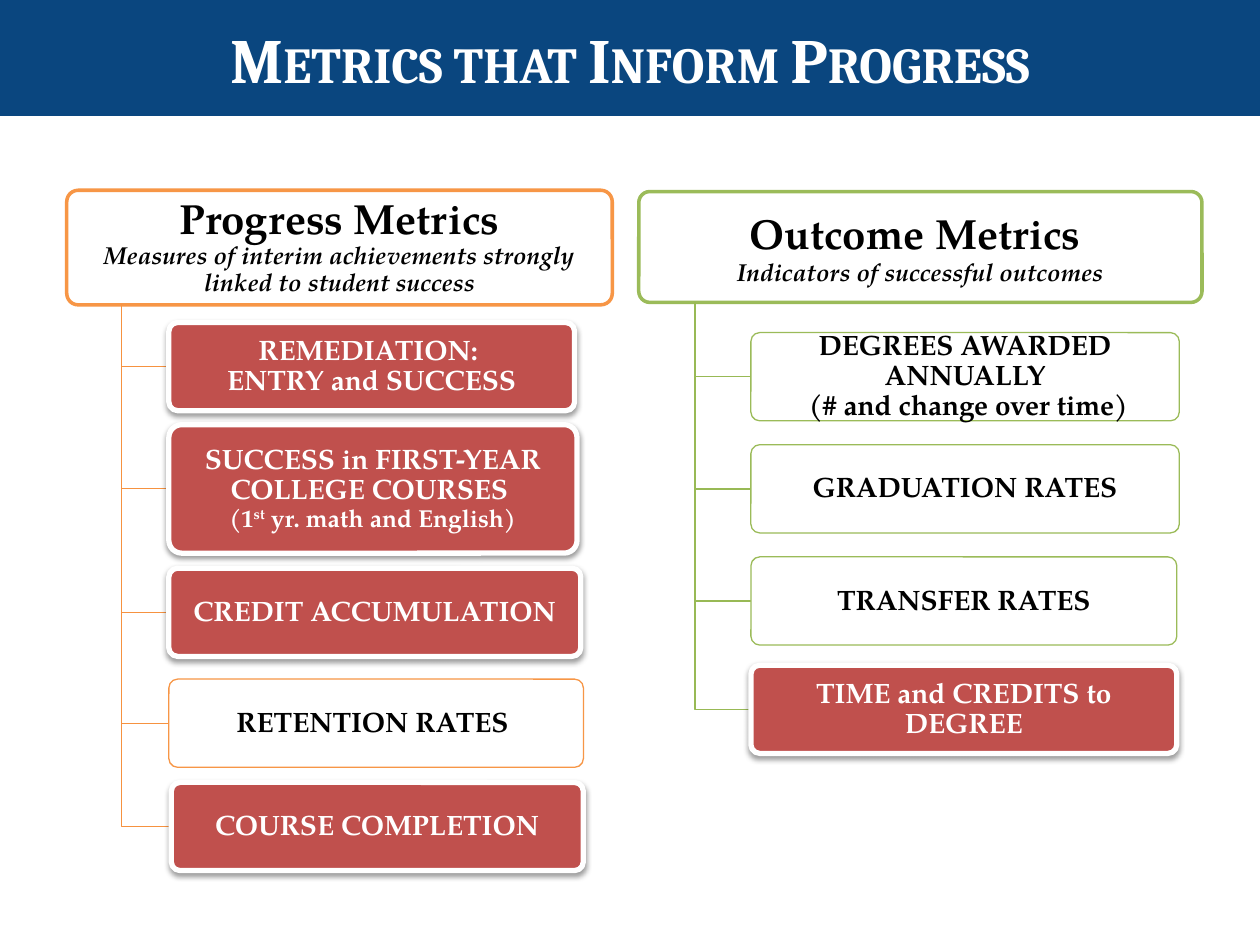
from pptx import Presentation
from pptx.dml.color import RGBColor
from pptx.enum.shapes import MSO_SHAPE
from pptx.enum.text import MSO_ANCHOR, PP_ALIGN
from pptx.oxml import parse_xml
from pptx.oxml.ns import nsdecls
from pptx.util import Inches, Pt

COLUMNS, ROWS = 100, 75  # grid of square cells over the slide
CELL = Inches(0.1)
BODY_FONT = "TeX Gyre Pagella"
BLACK, WHITE, NAVY, RED = "000000", "FFFFFF", "0A467F", "C0504D"


def grid(cells):
    return round(cells * CELL)


def rgb(hex_color):
    return RGBColor.from_string(hex_color)


def write(paragraph, text, size=16, font=BODY_FONT, color=BLACK, bold=True,
          italic=False, small_caps=False, raised=False):
    run = paragraph.add_run()
    run.text = text
    run.font.size = Pt(size)
    run.font.name = font
    run.font.bold = bold
    run.font.italic = italic
    run.font.color.rgb = rgb(color)
    properties = run.font._element
    if small_caps:
        properties.set("cap", "small")
    if raised:
        properties.set("baseline", "30000")


def add_lines(panel, lines, spacing=0.9, **base):
    """Each line is a list of (text, format) pairs."""
    frame = panel.text_frame
    frame.word_wrap = True
    frame.vertical_anchor = MSO_ANCHOR.MIDDLE
    frame.margin_left = frame.margin_right = Inches(0.02)
    frame.margin_top = frame.margin_bottom = 0
    for number, line in enumerate(lines):
        paragraph = frame.add_paragraph() if number else frame.paragraphs[0]
        paragraph.alignment = PP_ALIGN.CENTER
        paragraph.line_spacing = spacing
        for text, style in line:
            write(paragraph, text, **{**base, **style})


def add_panel(slide, box, fill, line=None, weight=0.75, kind=MSO_SHAPE.ROUNDED_RECTANGLE):
    panel = slide.shapes.add_shape(kind, *map(grid, box))
    panel.shadow.inherit = False
    panel.fill.solid()
    panel.fill.fore_color.rgb = rgb(fill)
    if line:
        panel.line.color.rgb = rgb(line)
        panel.line.width = Pt(weight)
    else:
        panel.line.fill.background()
    if kind == MSO_SHAPE.ROUNDED_RECTANGLE:
        panel.adjustments[0] = 0.1
    return panel


def add_drop_shadow(panel):
    effects = panel._element.spPr.find(
        "{http://schemas.openxmlformats.org/drawingml/2006/main}effectLst")
    effects.append(parse_xml(
        f'<a:outerShdw {nsdecls("a")} blurRad="{Pt(3.1)}" dist="{Pt(1.6)}" '
        'dir="5400000" rotWithShape="0"><a:srgbClr val="000000">'
        '<a:alpha val="38000"/></a:srgbClr></a:outerShdw>'))


def add_branch(slide, trunk, top, right, bottom, color):
    path = slide.shapes.build_freeform(grid(trunk), grid(top))
    path.add_line_segments([(grid(trunk), grid(bottom)), (grid(right), grid(bottom))],
                           close=False)
    branch = path.convert_to_shape()
    branch.shadow.inherit = False
    branch.fill.background()
    branch.line.color.rgb = rgb(color)
    branch.line.width = Pt(0.75)


def add_title(slide, box, text):
    banner = add_panel(slide, box, NAVY, kind=MSO_SHAPE.RECTANGLE)
    add_lines(banner, [[(text, {})]], spacing=1, size=36, font="Cambria",
              color=WHITE, small_caps=True)


def add_metric_tree(slide, box, heading, heading_spacing, heading_shift,
                    accent, branch_color, metrics):
    """Heading in the box, with its metrics branching off below."""
    left, top, width, height = box
    header = add_panel(slide, box, WHITE, accent, 2)
    title, subtitle = heading
    add_lines(header, [[(title, {"size": 24})],
                       [(subtitle, {"size": 14, "italic": True})]], heading_spacing)
    if heading_shift:  # a hanging indent moves the centred line left
        title_format = header.text_frame.paragraphs[0]._p.get_or_add_pPr()
        title_format.set("marL", "0")
        title_format.set("indent", str(-grid(heading_shift)))

    trunk, base = left + width / 10, top + height
    for metric_box, highlighted, lines in metrics:
        x, y, _, metric_height = metric_box
        add_branch(slide, trunk, base, x, y + metric_height / 2, branch_color)
        if highlighted:
            panel = add_panel(slide, metric_box, RED, WHITE, 3)
            add_drop_shadow(panel)
        else:
            panel = add_panel(slide, metric_box, WHITE, accent)
        add_lines(panel, lines, color=WHITE if highlighted else BLACK)


OUTCOMES = [
    ((59.6, 26.4, 34, 7), False, [[("DEGREES AWARDED ANNUALLY", {})],
                                  [(" (# and change over time)", {})]]),
    ((59.6, 35.3, 34, 7), False, [[("GRADUATION RATES", {})]]),
    ((59.6, 44.2, 33.8, 7), False, [[("TRANSFER RATES", {})]]),
    ((59.6, 52.8, 33.8, 7), True, [[("TIME and CREDITS to DEGREE", {})]]),
]
NOTE = {"size": 14}
PROGRESS = [
    ((13.4, 25.6, 32.2, 7), True, [[("REMEDIATION: ", {})], [("ENTRY and SUCCESS", {})]]),
    ((13.4, 33.7, 32.4, 10.2), True, [
        [("SUCCESS in FIRST-YEAR COLLEGE COURSES ", {})],
        [("(1", NOTE), ("st", {**NOTE, "raised": True}), (" yr. math and English)", NOTE)]]),
    ((13.4, 45.1, 32.7, 7), True, [[("CREDIT ACCUMULATION", {})]]),
    ((13.4, 53.9, 32.9, 7), False, [[("RETENTION RATES ", {})]]),
    ((13.6, 62.1, 32.7, 7), True, [[("COURSE COMPLETION", {})]]),
]


def main():
    deck = Presentation()
    deck.slide_width, deck.slide_height = grid(COLUMNS), grid(ROWS)
    slide = deck.slides.add_slide(deck.slide_layouts[6])

    add_title(slide, (0, 0, COLUMNS, 9.2), "Metrics that Inform Progress")
    add_metric_tree(slide, (50.7, 15.2, 44.7, 8.8),
                    ("Outcome Metrics ", "Indicators of successful outcomes"),
                    1, 0, "9BBB59", "98B955", OUTCOMES)
    add_metric_tree(slide, (5.3, 15.1, 43.3, 9.1),
                    ("Progress Metrics",
                     "Measures of interim achievements strongly linked to student success"),
                    0.9, 4.2, "F79646", "F69240", PROGRESS)
    deck.save("out.pptx")


if __name__ == "__main__":
    main()
